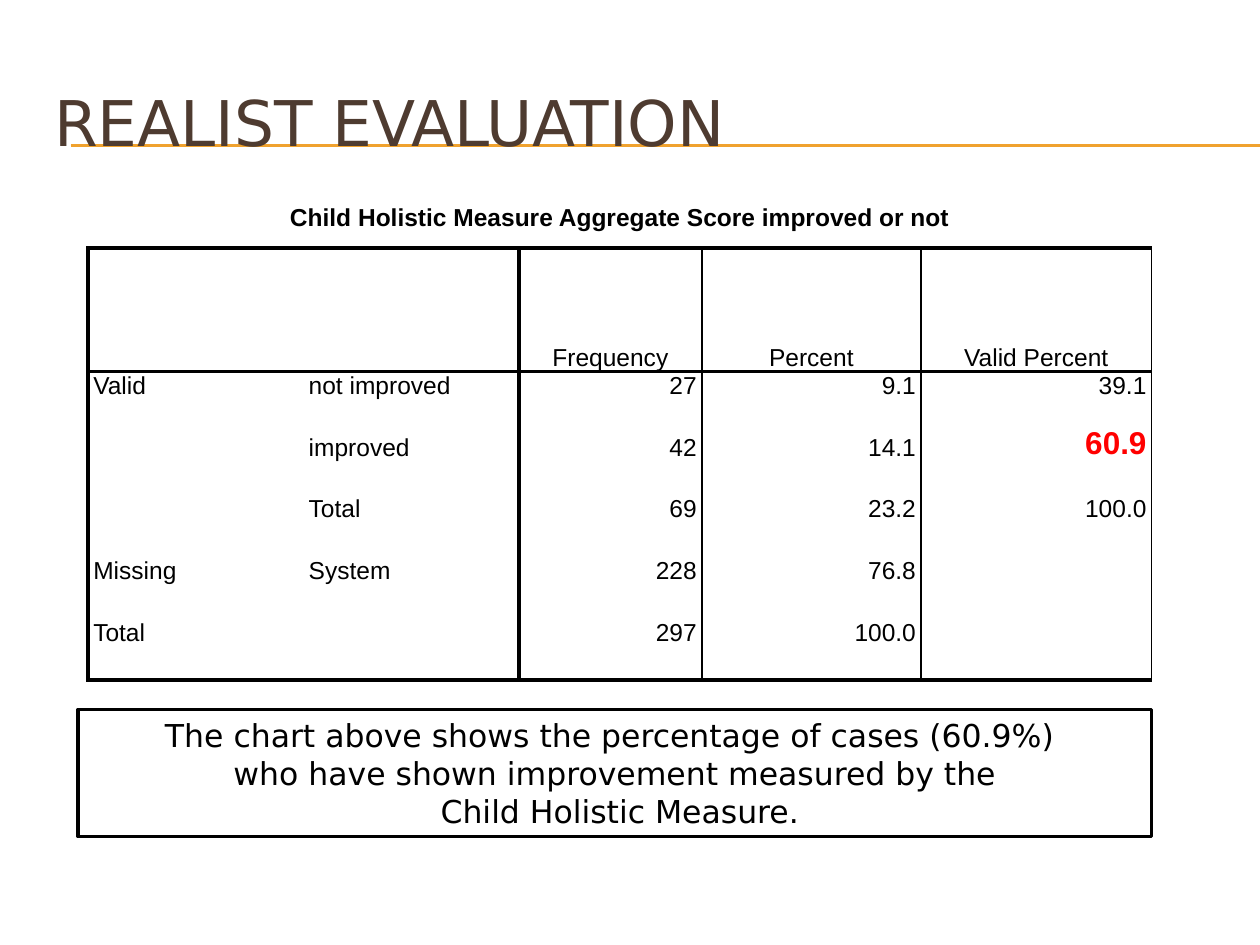
from lxml import etree
from pptx import Presentation
from pptx.dml.color import RGBColor
from pptx.enum.shapes import MSO_CONNECTOR, MSO_SHAPE
from pptx.enum.text import MSO_ANCHOR, PP_ALIGN
from pptx.oxml.ns import qn
from pptx.util import Inches, Pt

LEFT, CENTER, RIGHT = PP_ALIGN.LEFT, PP_ALIGN.CENTER, PP_ALIGN.RIGHT
TOP, MIDDLE, BOTTOM = MSO_ANCHOR.TOP, MSO_ANCHOR.MIDDLE, MSO_ANCHOR.BOTTOM

THEME = {
    "ink": "000000", "paper": "FFFFFF", "title": "4E3B30",
    "rule": "F0A22E", "accent": "FF0000",
    "heading_font": "DejaVu Sans", "table_font": "Arial",
    "title_size": 36, "note_size": 18, "table_size": 14, "accent_size": 18,
    "thin": 1, "thick": 2.25,
}

TITLE = "REALIST EVALUATION"
ROWS = [
    ["Child Holistic Measure Aggregate Score improved or not", "", "", "", ""],
    ["", "", "Frequency", "Percent", "Valid Percent"],
    ["Valid", "not improved", "27", "9.1", "39.1"],
    ["", "improved", "42", "14.1", "60.9"],
    ["", "Total", "69", "23.2", "100.0"],
    ["Missing", "System", "228", "76.8", ""],
    ["Total", "", "297", "100.0", ""],
]
NOTE = [
    "The chart above shows the percentage of cases (60.9%) ",
    "who have shown improvement measured by the",
    " Child Holistic Measure.",
]
COL_WIDTHS = [1.71, 1.71, 1.45, 1.74, 1.83]
ROW_HEIGHTS = [0.49, 0.98] + [0.49] * 5
MERGES = [((0, 0), (0, 4)), ((1, 0), (1, 1)), ((2, 0), (4, 0)), ((6, 0), (6, 1))]
HIGHLIGHT = (3, 4)
CAPTION, HEADER, FIRST_BODY, LAST = 0, 1, 2, len(ROWS) - 1
LABEL_COLS = 2


def rgb(name):
    return RGBColor.from_string(THEME[name])


def style(p, font, size, color, align, bold=False):
    p.alignment = align
    p.font.name, p.font.size, p.font.bold = THEME[font], Pt(THEME[size]), bold
    p.font.color.rgb = rgb(color)


def strip_effects(connector):
    etree.SubElement(connector._element.spPr, qn("a:effectLst"))


def cell_borders(r, c):
    """Widths by side; 0 is no line."""
    thin, thick = THEME["thin"], THEME["thick"]
    if r == CAPTION:
        return {"L": 0, "R": 0, "T": 0, "B": thick}
    is_label = c < LABEL_COLS
    return {
        "L": thick if c in (0, LABEL_COLS) else 0 if is_label else thin,
        "R": thick if c == LABEL_COLS - 1 else 0 if is_label else thin,
        "T": thick if r in (HEADER, FIRST_BODY) else 0,
        "B": thick if r in (HEADER, LAST) else 0,
    }


def draw_borders(cell, widths):
    tc_pr = cell._tc.get_or_add_tcPr()
    for i, side in enumerate("LRTB"):
        ln = etree.Element(qn("a:ln" + side), w=str(Pt(widths[side])))
        if widths[side]:
            fill = etree.SubElement(ln, qn("a:solidFill"))
            etree.SubElement(fill, qn("a:srgbClr"), val=THEME["ink"])
        else:
            etree.SubElement(ln, qn("a:noFill"))
        tc_pr.insert(i, ln)


def fill_cell(cell, r, c, text):
    cell.fill.solid()
    cell.fill.fore_color.rgb = rgb("paper")
    draw_borders(cell, cell_borders(r, c))
    cell.margin_left = cell.margin_right = cell.margin_top = cell.margin_bottom = 0
    cell.vertical_anchor = {CAPTION: MIDDLE, HEADER: BOTTOM}.get(r, TOP)
    cell.text = text
    p = cell.text_frame.paragraphs[0]
    align = CENTER if r <= HEADER else LEFT if c < LABEL_COLS else RIGHT
    if (r, c) == HIGHLIGHT:
        style(p, "table_font", "accent_size", "accent", align, bold=True)
    else:
        style(p, "table_font", "table_size", "ink", align, bold=r == CAPTION)
    p.line_spacing = Pt(16)
    p_pr = p._p.get_or_add_pPr()
    for side in ("marL", "marR"):
        p_pr.set(side, str(Inches(0.04)))
    p_pr.set("indent", "0")


def add_title(slide):
    for y in (1.15, 1.16):
        rule = slide.shapes.add_connector(
            MSO_CONNECTOR.STRAIGHT, Inches(0.56), Inches(y), Inches(10), Inches(y))
        rule.line.color.rgb = rgb("rule")
        rule.line.width = Pt(0.75)
        strip_effects(rule)
    title = slide.shapes.title
    slide.shapes._spTree.append(title._element)  # in front of the rules
    title.left, title.top = Inches(0.33), Inches(0.5)
    title.width, title.height = Inches(9.5), Inches(0.92)
    title.text_frame.text = TITLE
    title.text_frame.vertical_anchor = MIDDLE
    style(title.text_frame.paragraphs[0], "heading_font", "title_size", "title", LEFT)


def add_score_table(slide):
    table = slide.shapes.add_table(
        len(ROWS), len(COL_WIDTHS), Inches(0.7), Inches(1.48),
        Inches(sum(COL_WIDTHS)), Inches(sum(ROW_HEIGHTS))).table
    table.first_row = table.horz_banding = False
    for col, width in zip(table.columns, COL_WIDTHS):
        col.width = Inches(width)
    for row, height in zip(table.rows, ROW_HEIGHTS):
        row.height = Inches(height)
    for r, row in enumerate(ROWS):
        for c, text in enumerate(row):
            fill_cell(table.cell(r, c), r, c, text)
    for first, last in MERGES:
        table.cell(*first).merge(table.cell(*last))


def add_note(slide):
    box = slide.shapes.add_shape(
        MSO_SHAPE.RECTANGLE, Inches(0.62), Inches(5.63), Inches(8.52), Inches(1.01))
    box.shadow.inherit = False
    box.fill.solid()
    box.fill.fore_color.rgb = rgb("paper")
    box.line.color.rgb = rgb("ink")
    box.line.width = Pt(2)
    tf = box.text_frame
    tf.word_wrap = True
    tf.text = "\n".join(NOTE)
    for p in tf.paragraphs:
        style(p, "heading_font", "note_size", "ink", CENTER)


def main():
    prs = Presentation()
    prs.slide_width, prs.slide_height = Inches(10), Inches(7.5)
    slide = prs.slides.add_slide(prs.slide_layouts[5])
    add_title(slide)
    add_score_table(slide)
    add_note(slide)
    prs.save("out.pptx")


if __name__ == "__main__":
    main()
